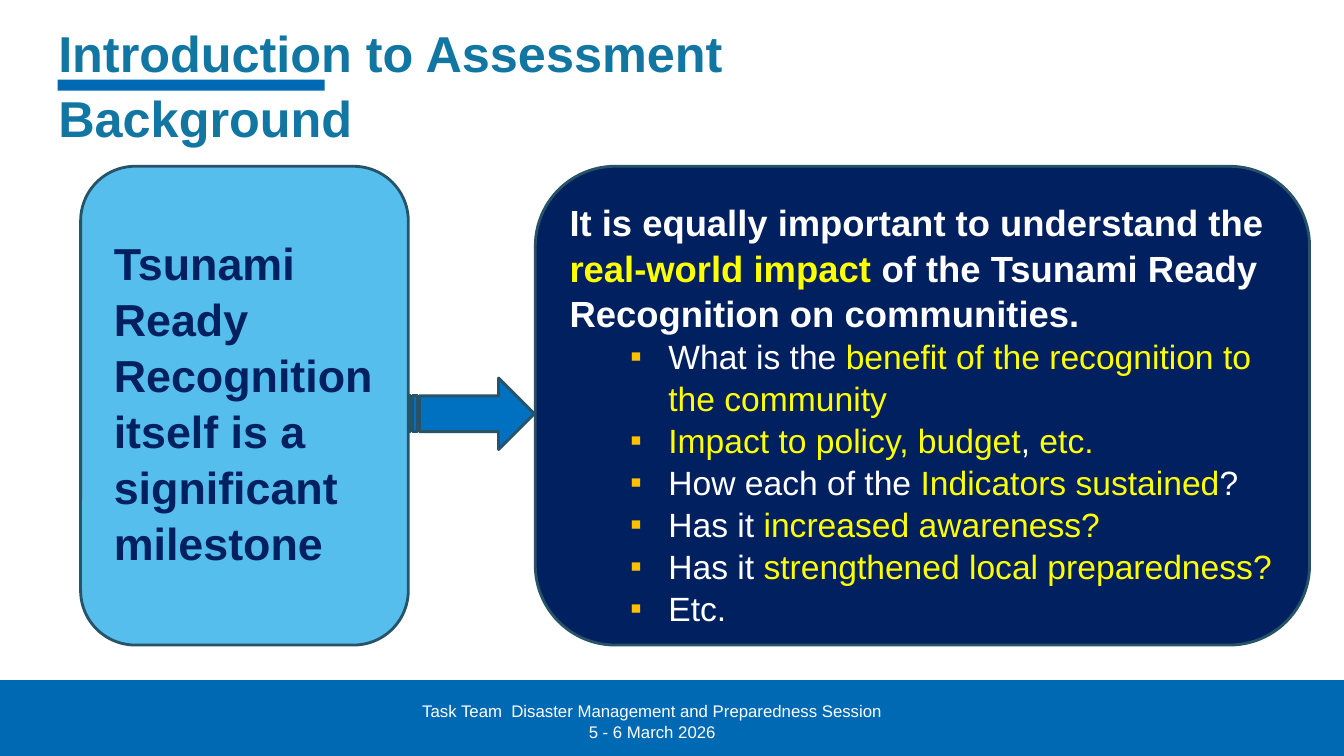
from dataclasses import dataclass

from lxml import etree
from pptx import Presentation
from pptx.dml.color import RGBColor
from pptx.enum.shapes import MSO_SHAPE
from pptx.enum.text import MSO_ANCHOR, PP_ALIGN
from pptx.oxml.ns import qn
from pptx.util import Inches, Pt

RECTANGLE = MSO_SHAPE.RECTANGLE
ROUNDED = MSO_SHAPE.ROUNDED_RECTANGLE
STRIPED_ARROW = MSO_SHAPE.STRIPED_RIGHT_ARROW
LEFT, CENTER = PP_ALIGN.LEFT, PP_ALIGN.CENTER
TOP, MIDDLE = MSO_ANCHOR.TOP, MSO_ANCHOR.MIDDLE
BLANK_LAYOUT = 6


@dataclass(frozen=True)
class Theme:
    font: str = "Arial"
    band: str = "0069B4"
    heading: str = "1276A3"
    navy: str = "002060"
    sky: str = "56BEEC"
    arrow: str = "0070C0"
    outline: str = "265367"
    white: str = "FFFFFF"
    accent: str = "FFFF00"
    bullet: str = "FFC000"
    heading_size: int = 36
    milestone_size: int = 32
    lead_size: int = 26
    question_size: int = 24
    footer_size: int = 12
    line_width: int = 2
    line_spacing: float = 1.04


class SlideBuilder:
    """Draws on one slide; every place is (left, top, width, height) in percent of the slide."""

    def __init__(self, deck, theme):
        self.deck = deck
        self.theme = theme
        self.slide = deck.slides.add_slide(deck.slide_layouts[BLANK_LAYOUT])

    def area(self, place):
        sizes = (self.deck.slide_width, self.deck.slide_height) * 2
        return [round(share * size / 100) for share, size in zip(place, sizes)]

    def shape(self, kind, place, fill, outline=None):
        shape = self.slide.shapes.add_shape(kind, *self.area(place))
        shape.shadow.inherit = False
        shape.fill.solid()
        shape.fill.fore_color.rgb = RGBColor.from_string(fill)
        if outline:
            shape.line.color.rgb = RGBColor.from_string(outline)
            shape.line.width = Pt(self.theme.line_width)
        else:
            shape.line.fill.background()

    def text_box(self, place, anchor=TOP):
        frame = self.slide.shapes.add_textbox(*self.area(place)).text_frame
        frame.word_wrap = True
        frame.vertical_anchor = anchor
        return frame

    def paragraph(self, frame, spans, size, bold=False, align=LEFT, bulleted=False):
        """Fills the empty first paragraph or appends one; spans are (text, colour) pairs."""
        first = frame.paragraphs[0]
        para = frame.add_paragraph() if first.runs else first
        para.alignment = align
        para.line_spacing = self.theme.line_spacing
        if bulleted:
            self.bullet(para)
        for text, color in spans:
            span = para.add_run()
            span.text = text
            span.font.name = self.theme.font
            span.font.size = Pt(size)
            span.font.bold = bold
            span.font.color.rgb = RGBColor.from_string(color)

    def bullet(self, para):
        properties = para._p.get_or_add_pPr()
        properties.set("marL", str(Inches(0.98)))
        properties.set("indent", str(Inches(-0.38)))
        color = etree.SubElement(properties, qn("a:buClr"))
        etree.SubElement(color, qn("a:srgbClr"), val=self.theme.bullet)
        etree.SubElement(properties, qn("a:buFont"), typeface=self.theme.font)
        etree.SubElement(properties, qn("a:buChar"), char="▪")

    def heading(self, text, place, anchor):
        frame = self.text_box(place, anchor)
        self.paragraph(frame, [(text, self.theme.heading)], self.theme.heading_size, bold=True)


def main():
    deck = Presentation()
    deck.slide_width, deck.slide_height = Inches(13.33), Inches(7.5)
    theme = Theme()
    page = SlideBuilder(deck, theme)
    white, accent = theme.white, theme.accent
    panel_top, panel_height = 22, 63.33

    page.shape(RECTANGLE, (0, 90.13, 100, 9.87), theme.band, theme.band)
    page.shape(RECTANGLE, (4.28, 10.53, 19.88, 1.47), theme.band)
    footer = page.text_box((23.48, 91.87, 50.11, 6.67))
    for line in ("Task Team  Disaster Management and Preparedness Session", "5 - 6 March 2026"):
        page.paragraph(footer, [(line, white)], theme.footer_size, align=CENTER)

    page.heading("Introduction to Assessment", (3.6, 1.73, 85.67, 10.13), MIDDLE)
    page.heading("Background", (3.6, 10.6, 50.11, 9.47), TOP)

    page.shape(ROUNDED, (39.83, panel_top, 57.61, panel_height), theme.navy, theme.outline)
    impact = page.text_box((41.64, 25.6, 55.74, 53.73))
    lead = [
        ("It is equally important to understand the ", white),
        ("real-world impact ", accent),
        ("of the Tsunami Ready Recognition on communities.", white),
    ]
    page.paragraph(impact, lead, theme.lead_size, bold=True)
    questions = [
        [("What is the ", white), ("benefit of the recognition to the community", accent)],
        [("Impact to policy, budget", accent), (", ", white), ("etc.", accent)],
        [("How each of the ", white), ("Indicators sustained", accent), ("?", white)],
        [("Has it ", white), ("increased awareness?", accent)],
        [("Has it ", white), ("strengthened local preparedness?", accent)],
        [("Etc.", white)],
    ]
    for question in questions:
        page.paragraph(impact, question, theme.question_size, bulleted=True)

    page.shape(ROUNDED, (6, panel_top, 24.38, panel_height), theme.sky, theme.outline)
    milestone = page.text_box((7.73, 30.3, 20.93, 44.4))
    statement = "Tsunami Ready Recognition itself is a significant milestone"
    page.paragraph(milestone, [(statement, theme.navy)], theme.milestone_size, bold=True)
    page.shape(STRIPED_ARROW, (30.38, 50, 9.38, 9.47), theme.arrow, theme.outline)

    deck.save("out.pptx")


if __name__ == "__main__":
    main()
